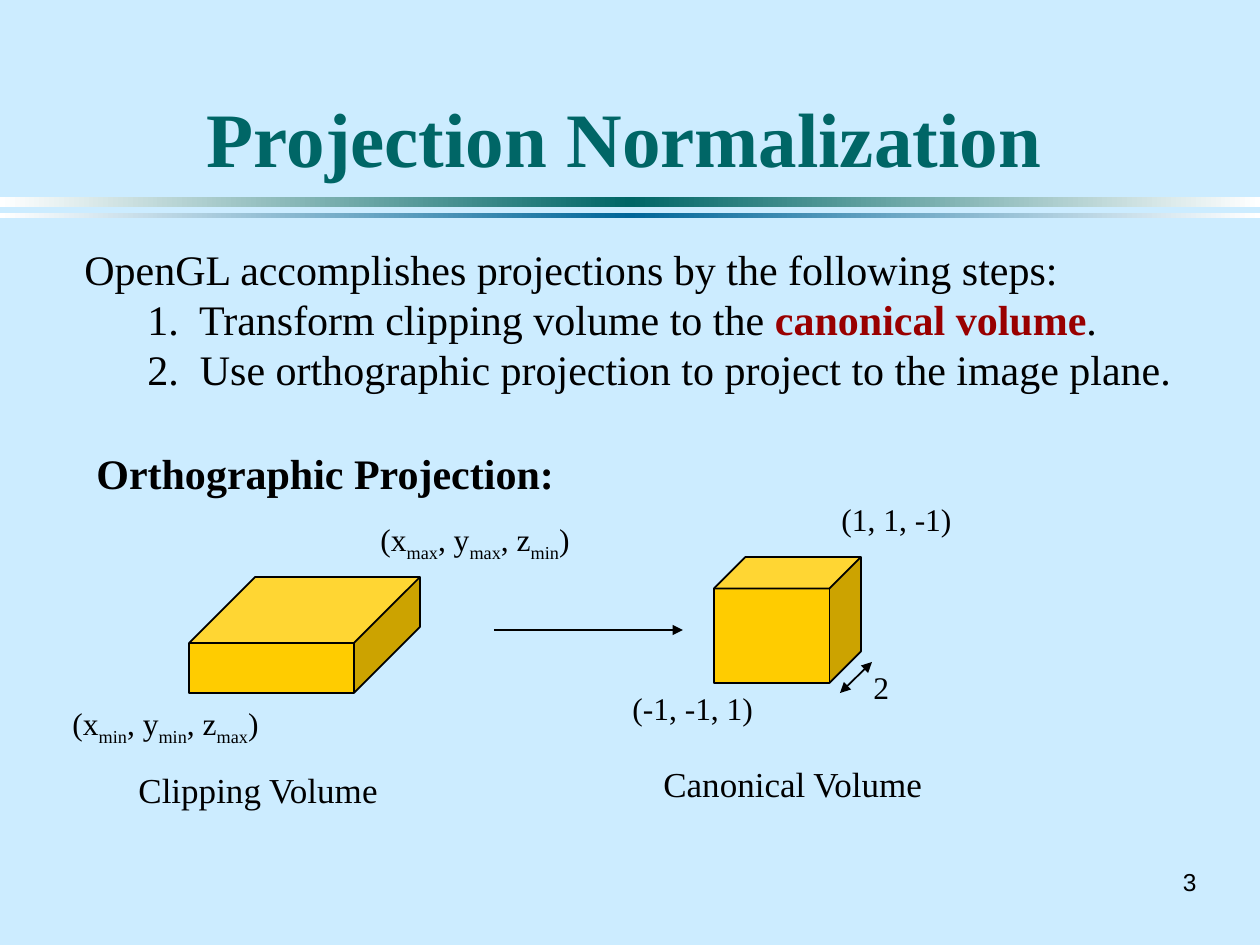
import copy

import pptx
import pptx.dml.color
import pptx.enum.shapes
import pptx.enum.text
import pptx.oxml.ns
import pptx.util
from lxml import etree

PX = 914400 / 126
BLACK = pptx.dml.color.RGBColor(0x00, 0x00, 0x00)
WHITE = pptx.dml.color.RGBColor(0xFF, 0xFF, 0xFF)
SKY = pptx.dml.color.RGBColor(0xCC, 0xEC, 0xFF)
TEAL = pptx.dml.color.RGBColor(0x00, 0x66, 0x66)
BLUE = pptx.dml.color.RGBColor(0x00, 0x66, 0x99)
RED = pptx.dml.color.RGBColor(0x99, 0x00, 0x00)
GOLD = pptx.dml.color.RGBColor(0xFF, 0xCC, 0x00)
ALIGN = pptx.enum.text.PP_ALIGN
ANCHOR = pptx.enum.text.MSO_ANCHOR
SHAPE = pptx.enum.shapes.MSO_SHAPE
qn = pptx.oxml.ns.qn


def emu(*lengths):
    return [pptx.util.Emu(round(length * PX)) for length in lengths]


def write(box, paragraphs, size, color=BLACK, bold=False, wrap=False,
          font="Times New Roman", align=ALIGN.LEFT, anchor=ANCHOR.TOP):
    frame = slide.shapes.add_textbox(*emu(*box)).text_frame
    frame.word_wrap = wrap
    frame.vertical_anchor = anchor
    for index, pieces in enumerate(paragraphs):
        paragraph = frame.paragraphs[0] if index == 0 else frame.add_paragraph()
        paragraph.alignment = align
        for text, style in pieces:
            run = paragraph.add_run()
            run.text = text
            run.font.name = font
            run.font.size = pptx.util.Pt(size)
            run.font.bold = bold or style == "key"
            run.font.color.rgb = RED if style == "key" else color
            if style == "sub":
                run.font._element.set("baseline", "-25000")


deck = pptx.Presentation()
deck.slide_width, deck.slide_height = emu(1260, 945)
slide = deck.slides.add_slide(deck.slide_layouts[6])
slide.background.fill.solid()
slide.background.fill.fore_color.rgb = SKY

for top, height, middle in [(197, 10, TEAL), (213, 5, BLUE)]:
    rule = slide.shapes.add_shape(SHAPE.RECTANGLE, *emu(0, top, 1260, height))
    rule.shadow.inherit = False
    rule.line.fill.background()
    rule.fill.gradient()
    rule.fill.gradient_angle = 0
    first_stop = rule.fill._xPr.find(qn("a:gradFill")).find(qn("a:gsLst"))[0]
    first_stop.addnext(copy.deepcopy(first_stop))
    for stop, position, color in zip(rule.fill.gradient_stops, (0, 0.5, 1), (WHITE, middle, WHITE)):
        stop.position = position
        stop.color.rgb = color

write((1155, 861, 54, 42), [[("3", "")]], 14, font="Arial",
      align=ALIGN.RIGHT, anchor=ANCHOR.MIDDLE)
write((84, 31, 1081, 158), [[("Projection Normalization", "")]], 44, TEAL, bold=True,
      wrap=True, align=ALIGN.CENTER, anchor=ANCHOR.BOTTOM)
write((72, 237, 1176, 164), [
    [("OpenGL accomplishes projections by the following steps:", "")],
    [("\t1.  Transform clipping volume to the ", ""), ("canonical volume", "key"), (".", "")],
    [("\t2.  Use orthographic projection to project to the image plane.", "")],
], 24)
write((84, 441, 484, 63), [[("Orthographic Projection:", "")]], 24, bold=True)

for box, depth in [((189, 577, 231, 116), 0.57), ((714, 557, 147, 126), 0.25)]:
    volume = slide.shapes.add_shape(SHAPE.CUBE, *emu(*box))
    volume.shadow.inherit = False
    volume.adjustments[0] = depth
    volume.fill.solid()
    volume.fill.fore_color.rgb = GOLD
    volume.line.color.rgb = BLACK
    volume.line.width = pptx.util.Pt(1)

for ends, heads in [((494, 630, 683, 630), ["tailEnd"]),
                    ((840, 693, 872, 662), ["headEnd", "tailEnd"])]:
    arrow = slide.shapes.add_connector(pptx.enum.shapes.MSO_CONNECTOR.STRAIGHT, *emu(*ends))
    arrow.line.color.rgb = BLACK
    arrow.line.width = pptx.util.Pt(1)
    for head in heads:
        etree.SubElement(arrow.line._get_or_add_ln(), qn("a:" + head), type="triangle")
    etree.SubElement(arrow._element.spPr, qn("a:effectLst"))

for box, xy_limit, z_limit in [((60, 698, 224, 50), "min", "max"),
                               ((368, 514, 262, 50), "max", "min")]:
    write(box, [[("(x", ""), (xy_limit, "sub"), (", y", ""), (xy_limit, "sub"),
                 (", z", ""), (z_limit, "sub"), (")", "")]], 18)

for box, label, size in [
    ((620, 683, 146, 50), "(-1, -1, 1)", 18),
    ((829, 494, 136, 50), "(1, 1, -1)", 18),
    ((861, 662, 42, 50), "2", 18),
    ((126, 762, 270, 54), "Clipping Volume", 20),
    ((651, 756, 289, 54), "Canonical Volume", 20),
]:
    write(box, [[(label, "")]], size)

deck.save("out.pptx")
